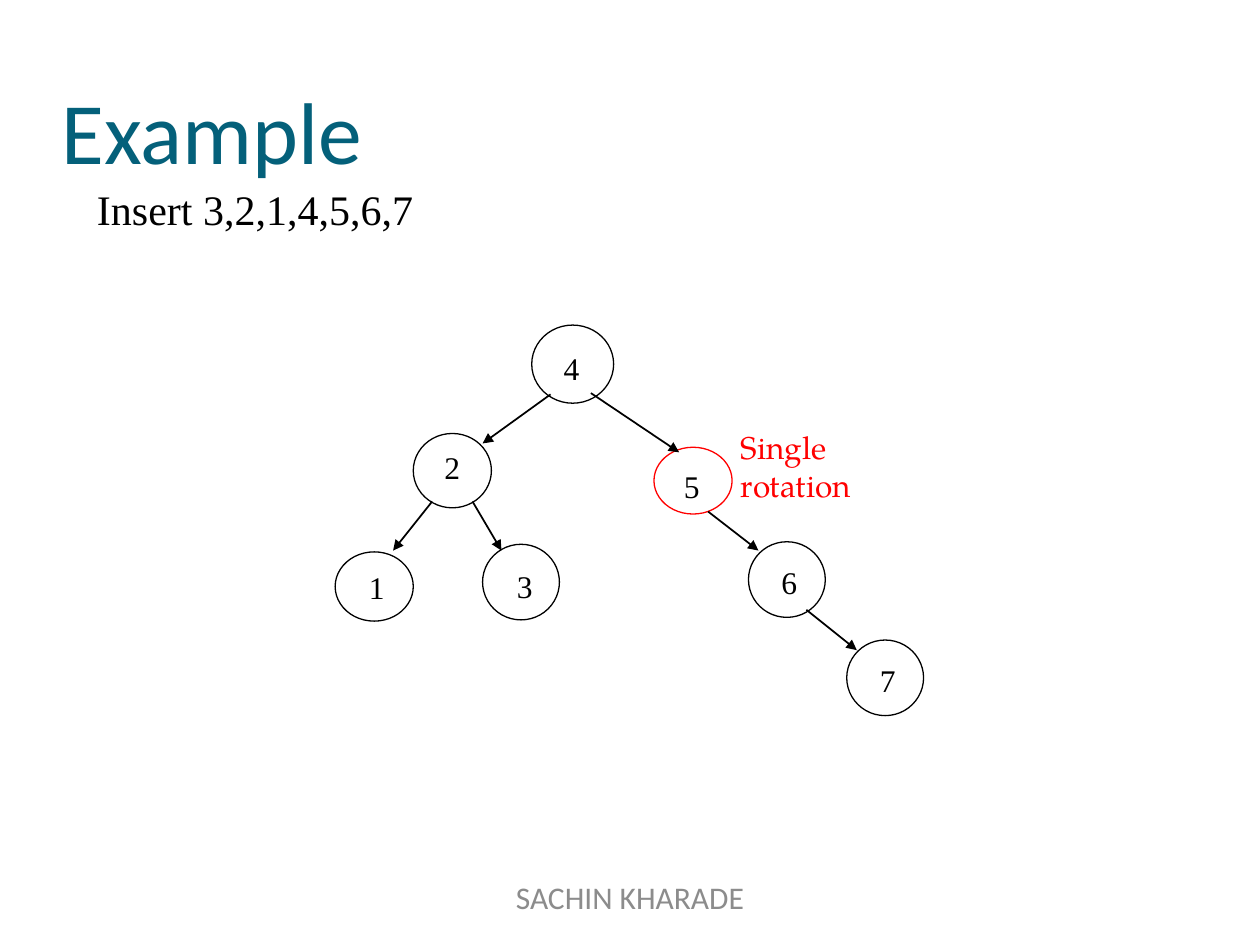
from pptx import Presentation
from pptx.dml.color import RGBColor
from pptx.enum.shapes import MSO_CONNECTOR as Connector, MSO_SHAPE as Shape
from pptx.enum.text import MSO_ANCHOR as Anchor, PP_ALIGN as Align
from pptx.oxml.ns import qn
from pptx.util import Inches, Pt
from lxml.etree import SubElement

BLACK, RED, TEAL, GREY = "000000", "FF0000", "04607A", "8C8C8C"
SERIF, SANS, BOOK = "Times New Roman", "Calibri", "TeX Gyre Pagella"


def color(value):
    return RGBColor.from_string(value)


class TreeSlide:
    """Draws on one slide; lengths are cells of a 100 by 75 grid."""

    def __init__(self, deck):
        self.cell = deck.slide_width / 100
        self.shapes = deck.slides.add_slide(deck.slide_layouts[6]).shapes

    def grid(self, *cells):
        return [round(cell * self.cell) for cell in cells]

    def fill_frame(self, frame, lines, **format_values):
        values = dict(word_wrap=True, margin_left=0, margin_top=0,
                      margin_right=0, margin_bottom=0)
        for name, value in {**values, **format_values}.items():
            setattr(frame, name, value)
        for index, (text, font, size, ink, align) in enumerate(lines):
            para = frame.add_paragraph() if index else frame.paragraphs[0]
            para.alignment = align
            span = para.add_run()
            span.text = text
            for name, value in dict(name=font, size=Pt(size)).items():
                setattr(span.font, name, value)
            span.font.color.rgb = color(ink)
        return frame

    def text(self, bounds, *lines):
        box = self.shapes.add_textbox(*self.grid(*bounds))
        return self.fill_frame(box.text_frame, lines)

    def node(self, label, bounds, shift, ink=BLACK):
        """Shift moves the label off the middle of the oval."""
        oval = self.shapes.add_shape(Shape.OVAL, *self.grid(*bounds))
        oval.shadow.inherit = False
        oval.fill.background()
        oval.line.color.rgb = color(ink)
        oval.line.width = Pt(0.75)
        right, down = self.grid(*(2 * part for part in shift))
        self.fill_frame(
            oval.text_frame, [(label, SERIF, 18, BLACK, Align.CENTER)],
            vertical_anchor=Anchor.MIDDLE,
            margin_left=max(right, 0), margin_right=max(-right, 0),
            margin_top=max(down, 0), margin_bottom=max(-down, 0))

    def arrow(self, start, end):
        edge = self.shapes.add_connector(Connector.STRAIGHT, *self.grid(*start, *end))
        edge.line.color.rgb = color(BLACK)
        edge.line.width = Pt(1)
        SubElement(edge.line._get_or_add_ln(), qn("a:tailEnd"), type="triangle")
        SubElement(edge._element.spPr, qn("a:effectLst"))


NODES = [
    ("4", (42.2, 25.8, 6.5, 6.2), (-0.1, 0.3)),
    ("2", (32.8, 34.4, 6.2, 5.9), (0, -0.3)),
    ("5", (51.9, 35.5, 6.2, 5.3), (-0.1, 0.4), RED),
    ("6", (59.4, 43, 6.1, 6), (0.2, 0.2)),
    ("3", (38.3, 43.2, 6.1, 6), (0.3, 0.3)),
    ("1", (26.6, 43.8, 6.2, 5.5), (0.2, 0)),
    ("7", (67.2, 50.8, 6.1, 6), (0.2, 0.2)),
]
EDGES = [
    ((43.7, 31.3), (38.3, 35.2)),
    ((46.9, 31.2), (53.9, 35.9)),
    ((34.3, 39.8), (31.2, 43.7)),
    ((37.5, 39.8), (39.8, 43.7)),
    ((56.2, 40.6), (60.2, 43.7)),
    ((64, 48.4), (68, 51.6)),
]


def main():
    deck = Presentation()
    deck.slide_width, deck.slide_height = Inches(10), Inches(7.5)
    slide = TreeSlide(deck)
    heading = slide.text(
        (4.9, 6.1, 28, 12.8),
        ("Example", SANS, 50, TEAL, Align.LEFT),
        ("Insert 3,2,1,4,5,6,7", SERIF, 24, BLACK, Align.LEFT))
    insert_line = heading.paragraphs[1]
    insert_line.space_before = Pt(1)
    insert_line._p.get_or_add_pPr().set("marL", str(Inches(0.28)))
    for node in NODES:
        slide.node(*node)
    for edge in EDGES:
        slide.arrow(*edge)
    slide.text((58.8, 34, 15, 6), ("Single rotation", BOOK, 18, RED, Align.LEFT))
    slide.text((34, 69.7, 32, 3.8), ("SACHIN KHARADE", SANS, 18, GREY, Align.CENTER))
    deck.save("out.pptx")


if __name__ == "__main__":
    main()
